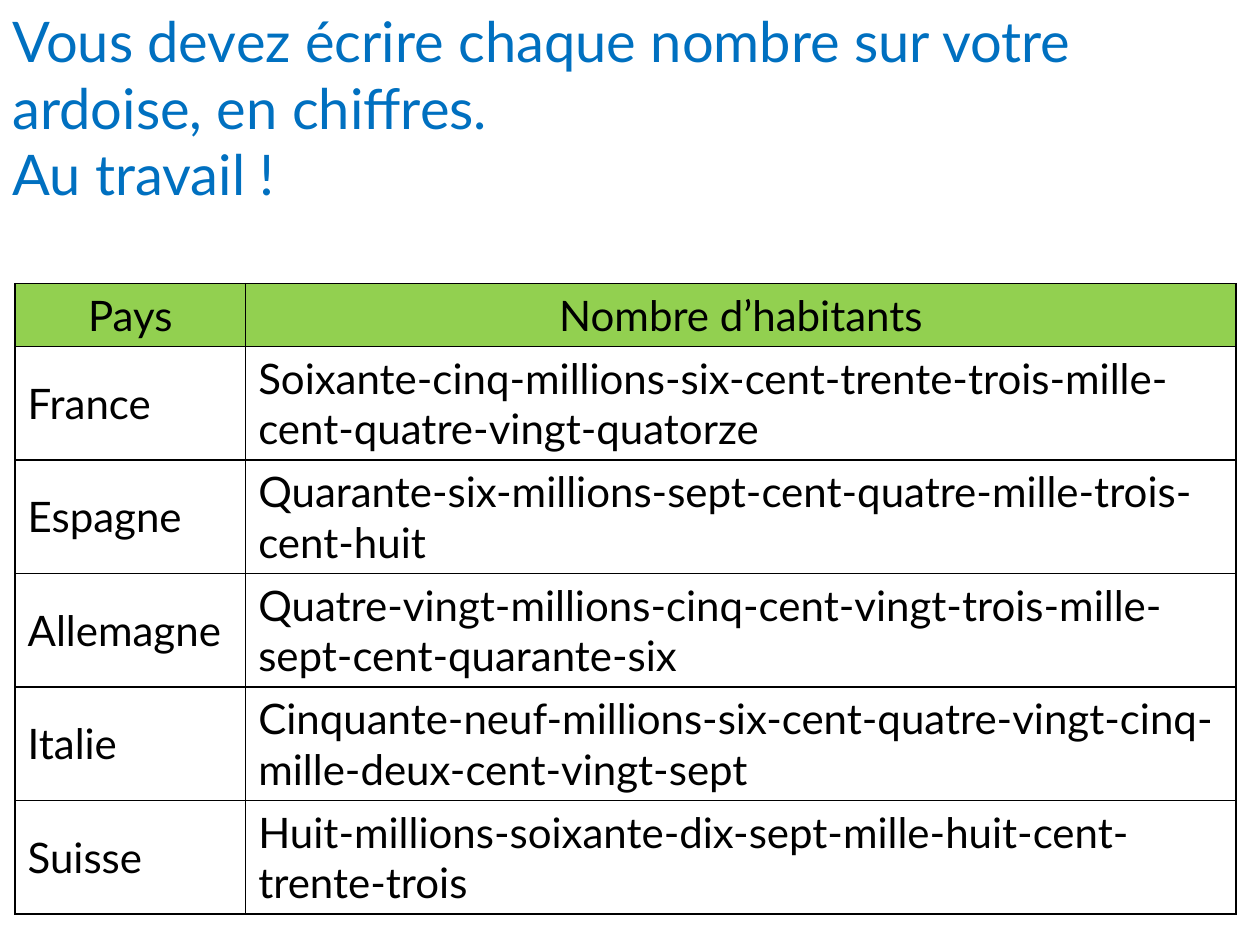
from lxml import etree
from pptx import Presentation
from pptx.dml.color import RGBColor
from pptx.enum import text as t
from pptx.oxml.ns import qn
from pptx.util import Inches, Pt


def write(frame, words, size=24, color="000000", align=t.PP_ALIGN.LEFT):
    frame.word_wrap = True
    para = frame.paragraphs[0]
    para.alignment = align
    run = para.add_run()
    run.text = words
    run.font.name = "Lato"
    run.font.size = Pt(size)
    run.font.color.rgb = RGBColor.from_string(color)


def border(cell, color="000000", width=1):
    props = cell._tc.get_or_add_tcPr()
    for n, side in enumerate(("lnL", "lnR", "lnT", "lnB")):
        line = etree.Element(qn("a:" + side), w=str(Pt(width)))
        fill = etree.SubElement(line, qn("a:solidFill"))
        etree.SubElement(fill, qn("a:srgbClr"), val=color)
        props.insert(n, line)  # borders come before the cell fill


prs = Presentation()
prs.slide_width, prs.slide_height = Inches(10), Inches(7.5)
slide = prs.slides.add_slide(prs.slide_layouts[6])

# Instructions
tasks = [
    (0, 1.18, "Vous devez écrire chaque nombre sur votre ardoise, en chiffres."),
    (1.06, 0.64, "Au travail !"),
]
for top, high, words in tasks:
    box = slide.shapes.add_textbox(0, Inches(top), Inches(10), Inches(high))
    write(box.text_frame, words, size=32, color="0070C0")

# Table of populations
rows = [
    ("Pays", "Nombre d’habitants"),
    ("France", "Soixante-cinq-millions-six-cent-trente-trois-mille-cent-quatre-vingt-quatorze"),
    ("Espagne", "Quarante-six-millions-sept-cent-quatre-mille-trois-cent-huit"),
    ("Allemagne", "Quatre-vingt-millions-cinq-cent-vingt-trois-mille-sept-cent-quarante-six"),
    ("Italie", "Cinquante-neuf-millions-six-cent-quatre-vingt-cinq-mille-deux-cent-vingt-sept"),
    ("Suisse", "Huit-millions-soixante-dix-sept-mille-huit-cent-trente-trois"),
]
table = slide.shapes.add_table(len(rows), 2, Inches(0.12), Inches(2.25),
                               Inches(9.69), Inches(5)).table
for col, wide in zip(table.columns, (1.83, 7.86)):
    col.width = Inches(wide)

for r, row in enumerate(rows):
    head = r == 0
    table.rows[r].height = Inches(0.5 if head else 0.9)
    for c, words in enumerate(row):
        cell = table.cell(r, c)
        cell.vertical_anchor = t.MSO_ANCHOR.TOP if head else t.MSO_ANCHOR.MIDDLE
        if head:
            cell.fill.solid()
            cell.fill.fore_color.rgb = RGBColor.from_string("92D050")
        else:
            cell.fill.background()
        border(cell)
        write(cell.text_frame, words,
              align=t.PP_ALIGN.CENTER if head else t.PP_ALIGN.LEFT)
        cell.text_frame.paragraphs[0].runs[0].font.bold = False

prs.save("out.pptx")
